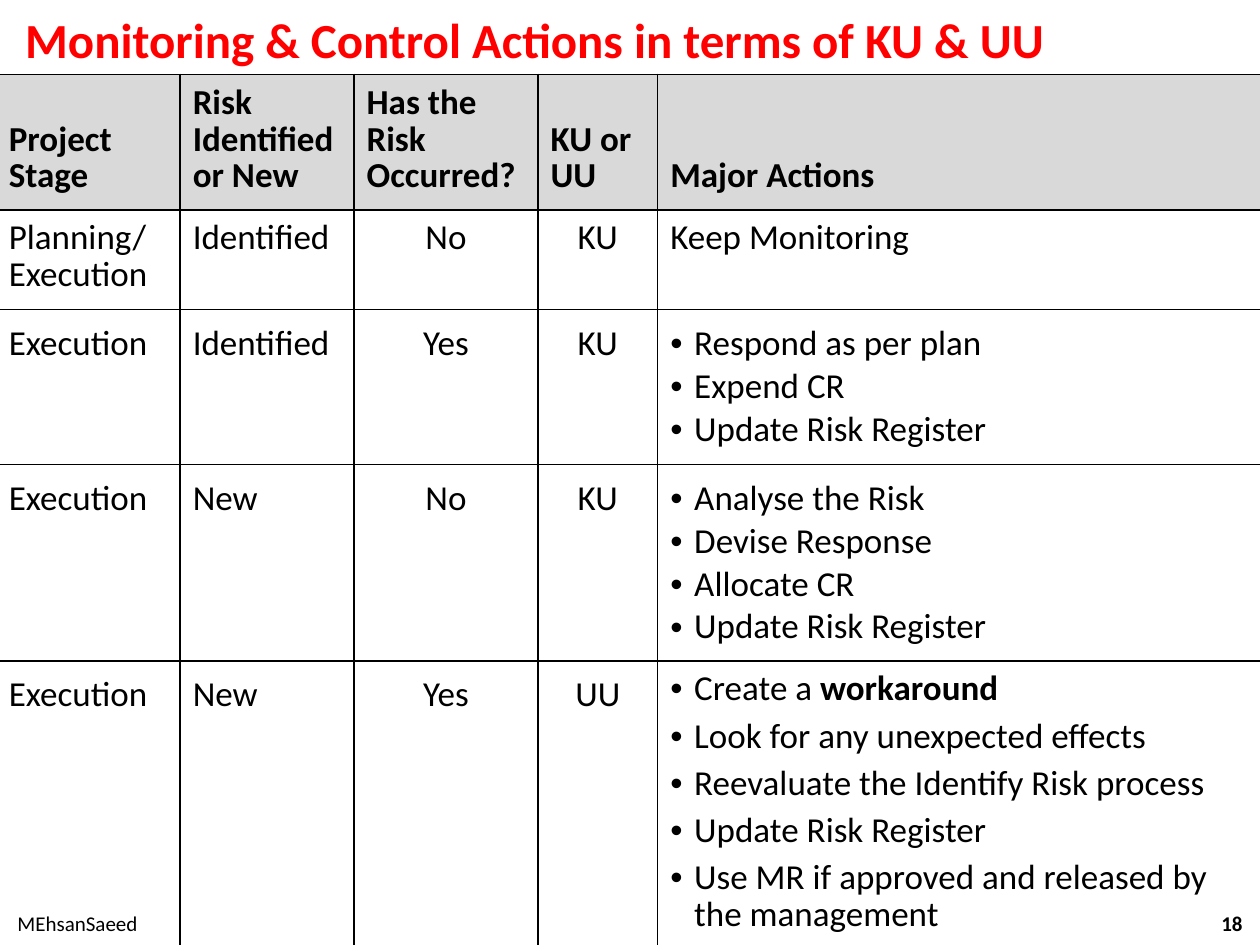
from lxml import etree
from pptx import Presentation
from pptx import util as u
from pptx.dml.color import RGBColor
from pptx.enum import text
from pptx.oxml.ns import qn

LEFT, MID, RIGHT = text.PP_ALIGN.LEFT, text.PP_ALIGN.CENTER, text.PP_ALIGN.RIGHT
TOP, CENTRE, BASE = (
    text.MSO_ANCHOR.TOP, text.MSO_ANCHOR.MIDDLE, text.MSO_ANCHOR.BOTTOM)

WIDTHS = [1.46, 1.38, 1.46, 0.95, 4.81]
HEIGHTS = [1.07, 0.79, 1.23, 1.56, 2.26]
HEADS = ["Project Stage", "Risk Identified or New", "Has the Risk Occurred?",
         "KU or UU", "Major Actions"]
CASES = [
    ("Planning/ Execution", "Identified", "No", "KU", "Keep Monitoring"),
    ("Execution", "Identified", "Yes", "KU",
     ["Respond as per plan", "Expend CR", "Update Risk Register"]),
    ("Execution", "New", "No", "KU",
     ["Analyse the Risk", "Devise Response", "Allocate CR",
      "Update Risk Register"]),
    ("Execution", "New", "Yes", "UU",
     [[("Create a ", False), ("workaround", True)],
      "Look for any unexpected effects",
      "Reevaluate the Identify Risk process",
      "Update Risk Register",
      "Use MR if approved and released by the management"]),
]


def tint(code):
    return RGBColor.from_string(code)


class Deck:
    font = "Calibri"
    ink = "000000"
    shade = "D9D9D9"

    def __init__(self):
        self.prs = Presentation()
        self.prs.slide_width = u.Inches(10)
        self.prs.slide_height = u.Inches(7.5)
        self.slide = self.prs.slides.add_slide(self.prs.slide_layouts[5])

    def run(self, para, words, size, bold=False, color=None):
        run = para.add_run()
        run.text = words
        run.font.name = self.font
        run.font.size = u.Pt(size)
        run.font.bold = bold
        run.font.color.rgb = tint(color or self.ink)

    def title(self, words, box):
        shape = self.slide.shapes.title
        shape.left, shape.top, shape.width, shape.height = map(u.Inches, box)
        frame = shape.text_frame
        frame.margin_left = u.Inches(0.2)
        frame.margin_right = frame.margin_top = frame.margin_bottom = 0
        frame.vertical_anchor = CENTRE
        para = frame.paragraphs[0]
        para.alignment = LEFT
        self.run(para, words, 28, True, "FF0000")

    def label(self, words, box, align, bold=False):
        frame = self.slide.shapes.add_textbox(*map(u.Inches, box)).text_frame
        frame.word_wrap = True
        frame.vertical_anchor = CENTRE
        para = frame.paragraphs[0]
        para.alignment = align
        self.run(para, words, 12, bold)

    def table(self, left, top, widths, heights):
        grid = self.slide.shapes.add_table(
            len(heights), len(widths), u.Inches(left), u.Inches(top),
            u.Inches(sum(widths)), u.Inches(sum(heights))).table
        grid.first_row = grid.horz_banding = False
        for col, width in zip(grid.columns, widths):
            col.width = u.Inches(width)
        for row, height in zip(grid.rows, heights):
            row.height = u.Inches(height)
        return grid

    def border(self, cell):
        props = cell._tc.get_or_add_tcPr()
        for spot, side in enumerate("LRTB"):
            line = etree.Element(qn("a:ln" + side), w=str(u.Pt(1)))
            fill = etree.SubElement(line, qn("a:solidFill"))
            etree.SubElement(fill, qn("a:srgbClr"), val=self.ink)
            props.insert(spot, line)

    def bullet(self, para):
        props = para._p.get_or_add_pPr()
        props.set("marL", str(u.Inches(0.19)))
        props.set("indent", str(u.Inches(-0.19)))
        etree.SubElement(props, qn("a:buFont"), typeface="Arial")
        etree.SubElement(props, qn("a:buChar"), char="•")

    def cell(self, cell, items, align=LEFT, head=False, tight=False, gap=0):
        cell.margin_left = cell.margin_right = u.Inches(0.1)
        cell.margin_top = cell.margin_bottom = u.Inches(0.1)
        cell.vertical_anchor = BASE if head else TOP
        if head:
            cell.fill.solid()
            cell.fill.fore_color.rgb = tint(self.shade)
        else:
            cell.fill.background()
        self.border(cell)
        listed = isinstance(items, list)
        frame = cell.text_frame
        for i, item in enumerate(items if listed else [items]):
            para = frame.add_paragraph() if i else frame.paragraphs[0]
            para.alignment = align
            if tight:
                para.line_spacing = u.Pt(21)
            if gap:
                para.space_before = para.space_after = u.Pt(gap)
            if listed:
                self.bullet(para)
            parts = [(item, head)] if isinstance(item, str) else item
            for words, bold in parts:
                self.run(para, words, 20, bold)


def main():
    deck = Deck()
    deck.title("Monitoring & Control Actions in terms of KU & UU",
               (0, 0, 10, 0.62))
    deck.label("18", (7.63, 7.13, 2.33, 0.4), RIGHT, True)
    grid = deck.table(-0.03, 0.59, WIDTHS, HEIGHTS)
    for c, words in enumerate(HEADS):
        deck.cell(grid.cell(0, c), words, head=True, tight=True)
    last = len(CASES)
    for r, case in enumerate(CASES, 1):
        for c, items in enumerate(case):
            final = r == last and isinstance(items, list)
            deck.cell(grid.cell(r, c), items, MID if c in (2, 3) else LEFT,
                      tight=r == 1 or final, gap=3 if final else 0)
    deck.label("MEhsanSaeed", (-0.01, 7.13, 1.25, 0.4), MID)
    deck.prs.save("out.pptx")


if __name__ == "__main__":
    main()
